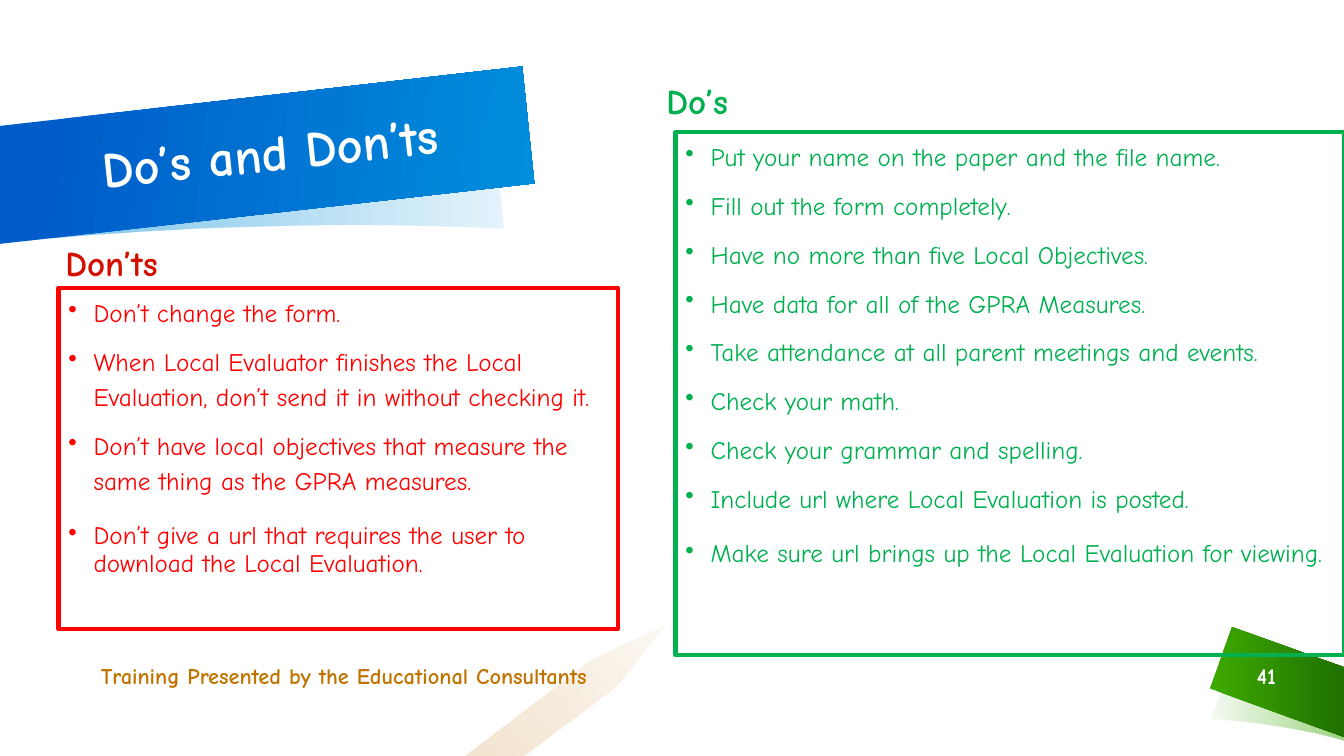
import pptx
import pptx.util
import pptx.dml.color
import pptx.enum.shapes
import pptx.enum.text
import pptx.oxml.ns
from lxml import etree

Inches, Pt = pptx.util.Inches, pptx.util.Pt
ANCHOR = pptx.enum.text.MSO_ANCHOR
ALIGN = pptx.enum.text.PP_ALIGN
qn = pptx.oxml.ns.qn

# Content
TITLE = "Do’s and Don’ts"
FOOTER = "Training Presented by the Educational Consultants"
PAGE_NUMBER = "41"
DOS = [
    "Put your name on the paper and the file name.",
    "Fill out the form completely.",
    "Have no more than five Local Objectives.",
    "Have data for all of the GPRA Measures.",
    "Take attendance at all parent meetings and events.",
    "Check your math.",
    "Check your grammar and spelling.",
    "Include url where Local Evaluation is posted.",
    "Make sure url brings up the Local Evaluation for viewing.",
]
DONTS = [
    "Don’t change the form.",
    "When Local Evaluator finishes the Local Evaluation, don’t send it in without checking it.",
    "Don’t have local objectives that measure the same thing as the GPRA measures.",
    "Don’t give a url that requires the user to download the Local Evaluation.",
]

THEME = {
    "font": "Comic Neue",
    "title": 36, "heading": 25, "body": 18, "small": 16,
    "white": "FFFFFF", "do": "00B050", "dont": "FF0000", "dont_heading": "D30F00",
    "ochre": "C07400", "green": "3DA800", "dark_green": "1F7100",
    "blue": "008EDC", "dark_blue": "005CC9",
}

# Ribbons: outline (2 numbers = line, 6 = curve), gradient stops (%, colour, opacity %), angle
RIBBONS = [
    ([(12.02, 7.13), (12.02, 7.13, 12.78, 7.18, 13.33, 7.35), (13.33, 6.68),
      (12.72, 6.51, 12.24, 6.52, 12.24, 6.52)],
     [(3, "green", 6), (100, "green", 50)], 0),
    ([(13.33, 6.62), (12.22, 6.22), (12, 6.83), (13.33, 7.31)],
     [(3, "green", 100), (100, "dark_green", 100)], 0),
    ([(4.99, 2.27), (4.87, 1.13), (4.87, 1.13, 3.13, 0.94, 0, 1.25), (0, 2.41),
      (2.86, 2.12, 4.99, 2.27, 4.99, 2.27)],
     [(0, "blue", 10), (88, "blue", 50)], 180),
    ([(0, 2.42), (5.3, 1.82), (5.18, 0.66), (0, 1.25)],
     [(9, "dark_blue", 100), (100, "blue", 100)], 6),
    ([(6.6, 6.2), (5.86, 6.55), (4.61, 7.5), (5.2, 7.5), (6.11, 6.82)],
     [(0, "ochre", 5), (100, "ochre", 20)], 139),
]
CURVE_STEPS = 16

deck = pptx.Presentation()
deck.slide_width, deck.slide_height = Inches(13.33), Inches(7.5)
slide = deck.slides.add_slide(deck.slide_layouts[6])


def rgb(name):
    return pptx.dml.color.RGBColor.from_string(THEME[name])


def trace(outline):
    """Turn lines and cubic curves into a list of points."""
    points = [outline[0]]
    for step in outline[1:]:
        if len(step) == 2:
            points.append(step)
            continue
        corners = [points[-1], step[:2], step[2:4], step[4:]]
        for i in range(1, CURVE_STEPS + 1):
            t = i / CURVE_STEPS
            weights = [(1 - t) ** 3, 3 * t * (1 - t) ** 2, 3 * t ** 2 * (1 - t), t ** 3]
            points.append(tuple(sum(w * c[axis] for w, c in zip(weights, corners))
                                for axis in (0, 1)))
    return [(Inches(x), Inches(y)) for x, y in points]


def add_ribbon(outline, stops, angle):
    start, *rest = trace(outline)
    builder = slide.shapes.build_freeform(*start)
    builder.add_line_segments(rest, close=True)
    ribbon = builder.convert_to_shape()
    ribbon.shadow.inherit = False
    ribbon.line.fill.background()
    ribbon.fill.gradient()
    ribbon.fill.gradient_angle = -angle % 360
    for stop, (position, color, _) in zip(ribbon.fill.gradient_stops, stops):
        stop.position = position / 100
        stop.color.rgb = rgb(color)
    # Opacity of each stop
    colors = ribbon._element.spPr.iter(qn("a:srgbClr"))
    for color, (_, _, opacity) in zip(colors, stops):
        if opacity < 100:
            etree.SubElement(color, qn("a:alpha")).set("val", str(opacity * 1000))


def style(paragraph, size, color, bold):
    for run in paragraph.runs:
        font = run.font
        font.name, font.size, font.bold = THEME["font"], Pt(THEME[size]), bold
        font.color.rgb = rgb(color)


def add_label(text, box, size, color, anchor=ANCHOR.MIDDLE, align=ALIGN.LEFT, spacing=1.0):
    label = slide.shapes.add_textbox(*map(Inches, box))
    frame = label.text_frame
    frame.word_wrap, frame.vertical_anchor = True, anchor
    frame.text = text
    paragraph = frame.paragraphs[0]
    paragraph.alignment, paragraph.line_spacing = align, spacing
    style(paragraph, size, color, True)
    return label


def add_bullet(paragraph, color):
    properties = paragraph._p.get_or_add_pPr()
    properties.set("marL", str(Inches(0.25)))
    properties.set("indent", str(Inches(-0.25)))
    bullet_color = etree.SubElement(properties, qn("a:buClr"))
    etree.SubElement(bullet_color, qn("a:srgbClr")).set("val", THEME[color])
    etree.SubElement(properties, qn("a:buChar")).set("char", "•")


def add_advice(items, box, color):
    advice = slide.shapes.add_shape(pptx.enum.shapes.MSO_SHAPE.RECTANGLE, *map(Inches, box))
    advice.shadow.inherit = False
    advice.fill.background()
    advice.line.color.rgb, advice.line.width = rgb(color), Pt(3)
    frame = advice.text_frame
    frame.word_wrap, frame.vertical_anchor = True, ANCHOR.TOP
    frame.text = "\n".join(items)
    *leading, last = frame.paragraphs
    for paragraph in frame.paragraphs:
        add_bullet(paragraph, color)
        paragraph.alignment = ALIGN.LEFT
        style(paragraph, "body", color, False)
    for paragraph in leading:
        paragraph.line_spacing, paragraph.space_after = 1.15, Pt(10)
    last.line_spacing, last.space_before = 0.9, Pt(10)


# Background ribbons
for ribbon_parts in RIBBONS:
    add_ribbon(*ribbon_parts)

# Do's column
add_label("Do’s", (6.51, 0.6, 5.02, 0.66), "heading", "do", ANCHOR.BOTTOM, spacing=0.9)
add_advice(DOS, (6.7, 1.31, 6.63, 5.19), "do")

# Footer and page number
footer = add_label(FOOTER, (1, 6.5, 6.63, 0.4), "small", "ochre")
footer.text_frame.margin_left = 0
add_label(PAGE_NUMBER, (12.21, 6.5, 0.7, 0.4), "small", "white", align=ALIGN.CENTER)

# Title on the blue ribbon
title = add_label(TITLE, (0.91, 0.93, 4.29, 1.14), "title", "white", spacing=0.9)
title.rotation = 354

# Don'ts column
add_label("Don’ts", (0.55, 2.21, 5.55, 0.66), "heading", "dont_heading",
          ANCHOR.BOTTOM, spacing=0.9)
add_advice(DONTS, (0.58, 2.86, 5.55, 3.38), "dont")

deck.save("out.pptx")
